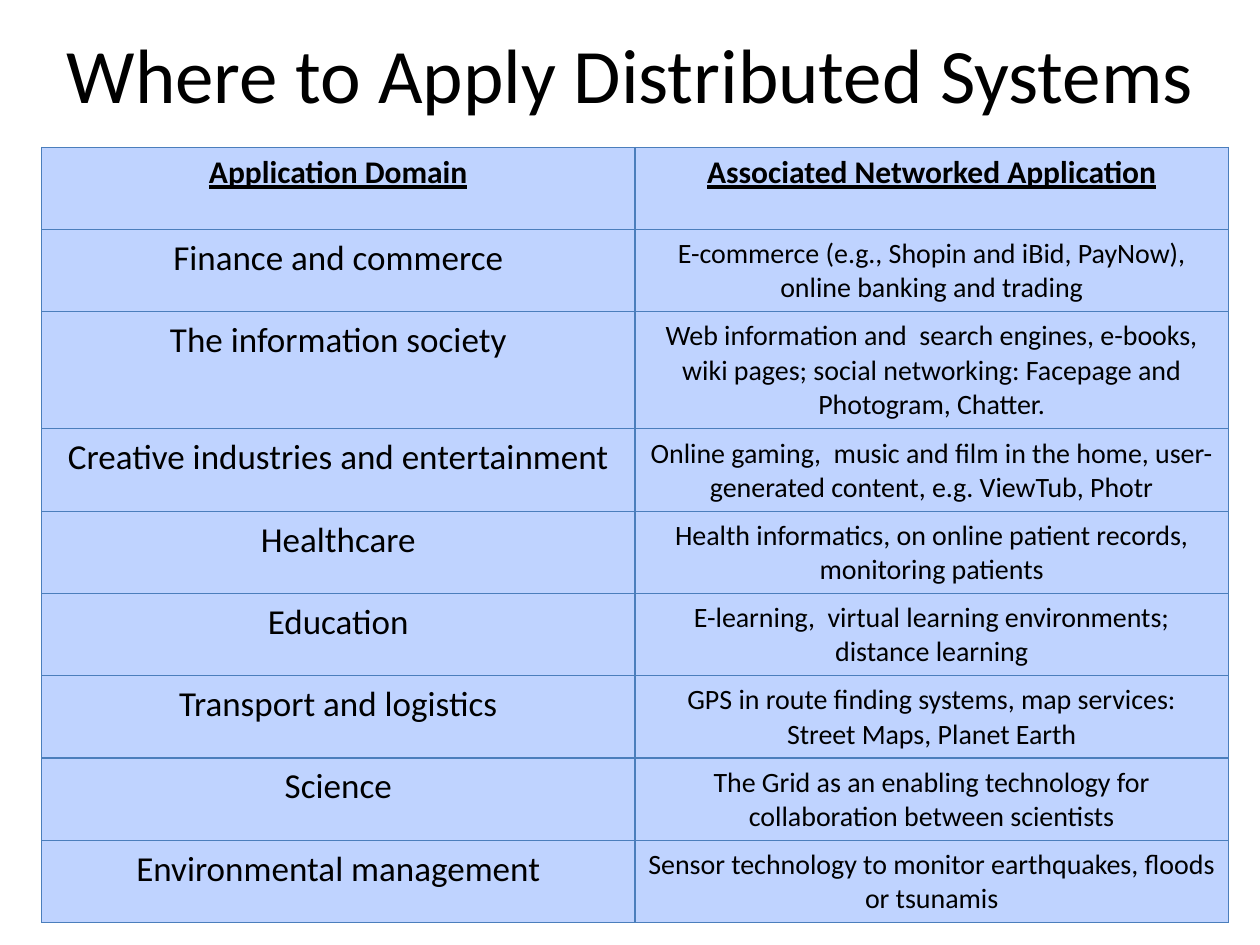
from dataclasses import dataclass

import lxml.etree
import pptx
import pptx.dml.color
import pptx.enum.text
import pptx.oxml.ns
import pptx.util

Inches = pptx.util.Inches
FONT = "Calibri"
INK = "000000"
CELL_FILL = "BFD3FF"
BORDER = "4B7EBC"
BORDER_WIDTH = 0.75


@dataclass(frozen=True)
class Domain:
    name: str
    applications: tuple[str, ...]
    height: float = 0.65


DOMAINS = (
    Domain("Finance and commerce",
           ("E-commerce (e.g., Shopin and iBid, PayNow), online banking and trading",)),
    Domain("The information society",
           ("Web information and  search engines, e-books, wiki pages; "
            "social networking: Facepage and Photogram, Chatter.",), 0.93),
    Domain("Creative industries and entertainment",
           ("Online gaming,  music and film in the home, "
            "user-generated content, e.g. ViewTub, Photr",)),
    Domain("Healthcare",
           ("Health informatics, on online patient records, monitoring patients",)),
    Domain("Education",
           ("E-learning,  virtual learning environments;", "distance learning")),
    Domain("Transport and logistics",
           ("GPS in route finding systems, map services:", "Street Maps, Planet Earth")),
    Domain("Science",
           ("The Grid as an enabling technology for collaboration between scientists",)),
    Domain("Environmental management",
           ("Sensor technology to monitor earthquakes, floods or tsunamis",)),
)


def color(value: str) -> pptx.dml.color.RGBColor:
    return pptx.dml.color.RGBColor.from_string(value)


def write(frame, *lines: str, size: float, bold: bool = False, underline: bool = False) -> None:
    frame.word_wrap = True
    for index, line in enumerate(lines):
        paragraph = frame.paragraphs[0] if index == 0 else frame.add_paragraph()
        paragraph.alignment = pptx.enum.text.PP_ALIGN.CENTER
        run = paragraph.add_run()
        run.text = line
        run.font.name = FONT
        run.font.size = pptx.util.Pt(size)
        run.font.bold = bold
        run.font.underline = underline
        run.font.color.rgb = color(INK)


def style_cell(cell, side_inset: float, top_inset: float) -> None:
    cell.margin_left = cell.margin_right = Inches(side_inset)
    cell.margin_top = cell.margin_bottom = Inches(top_inset)
    qn = pptx.oxml.ns.qn
    properties = cell._tc.get_or_add_tcPr()
    for side in ("L", "R", "T", "B"):
        line = lxml.etree.SubElement(properties, qn(f"a:ln{side}"),
                                     w=str(pptx.util.Pt(BORDER_WIDTH)))
        paint = lxml.etree.SubElement(line, qn("a:solidFill"))
        lxml.etree.SubElement(paint, qn("a:srgbClr"), val=BORDER)
    cell.fill.solid()
    cell.fill.fore_color.rgb = color(CELL_FILL)


def add_title(slide, text: str) -> None:
    title = slide.shapes.add_textbox(Inches(0.42), Inches(0.08), Inches(9.17), Inches(1))
    title.text_frame.vertical_anchor = pptx.enum.text.MSO_ANCHOR.MIDDLE
    write(title.text_frame, text, size=44)


def add_domain_table(slide, headings: tuple[str, str], domains: tuple[Domain, ...]) -> None:
    heights = [0.65] + [domain.height for domain in domains]
    table = slide.shapes.add_table(
        len(heights), 2, Inches(0.33), Inches(1.17), Inches(9.42), Inches(sum(heights))
    ).table
    table.first_row = table.horz_banding = False
    for row, height in zip(table.rows, heights):
        row.height = Inches(height)
    for column, heading in enumerate(headings):
        cell = table.cell(0, column)
        style_cell(cell, 0.1, 0.05)
        write(cell.text_frame, heading, size=18, bold=True, underline=True)
    for row, domain in enumerate(domains, start=1):
        for column, (lines, size) in enumerate((((domain.name,), 20), (domain.applications, 16))):
            cell = table.cell(row, column)
            style_cell(cell, 0.06, 0.06)
            write(cell.text_frame, *lines, size=size)


def main() -> None:
    deck = pptx.Presentation()
    deck.slide_width, deck.slide_height = Inches(10), Inches(7.5)
    slide = deck.slides.add_slide(deck.slide_layouts[6])
    add_title(slide, "Where to Apply Distributed Systems")
    add_domain_table(slide, ("Application Domain", "Associated Networked Application"), DOMAINS)
    deck.save("out.pptx")


if __name__ == "__main__":
    main()
